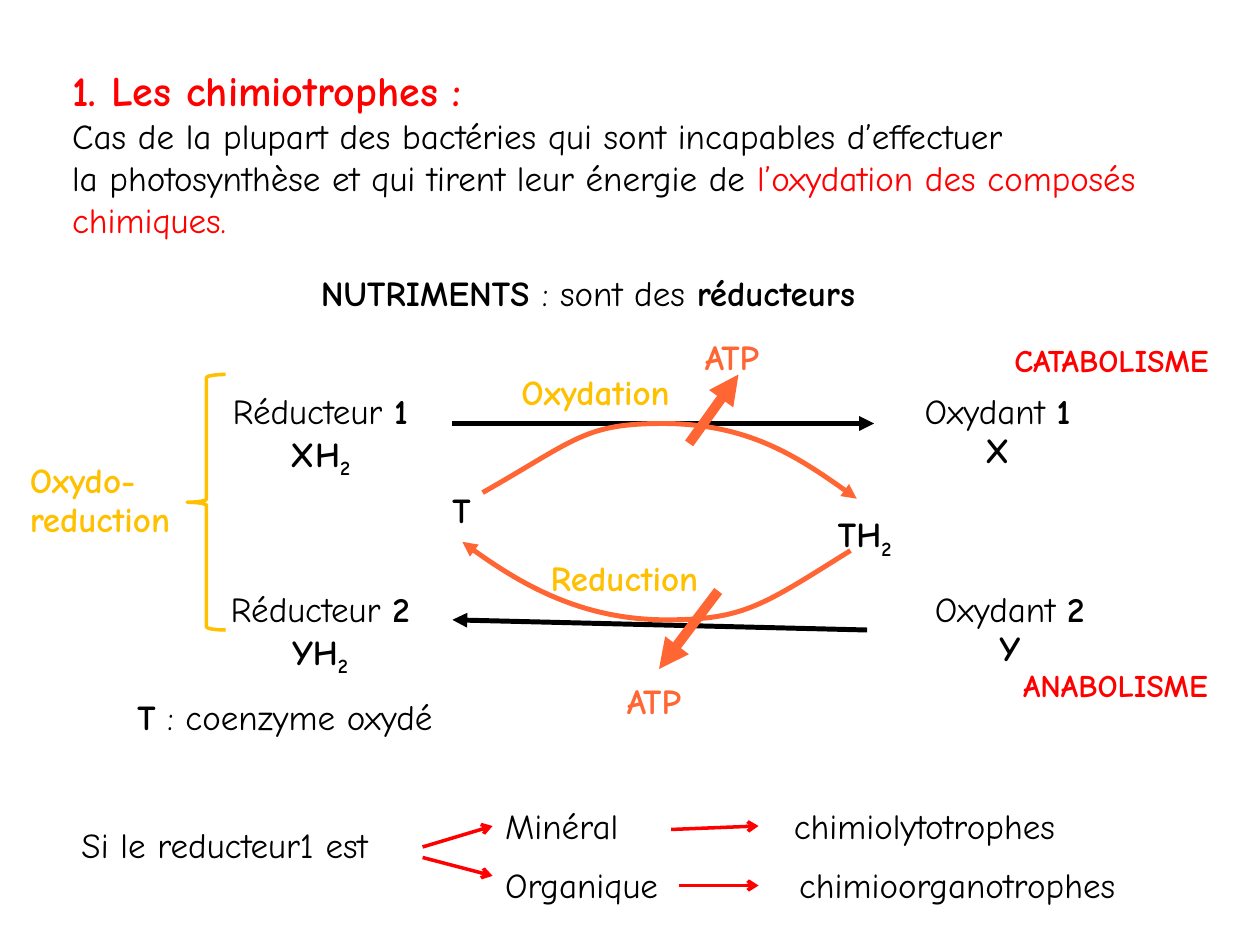
from dataclasses import dataclass

from lxml.etree import SubElement
from pptx import Presentation
from pptx.dml.color import RGBColor as RGB
from pptx.enum.shapes import MSO_CONNECTOR as LINK, MSO_SHAPE as SHAPE
from pptx.enum.text import MSO_ANCHOR as ANCHOR, MSO_AUTO_SIZE as FIT, PP_ALIGN as ALIGN
from pptx.oxml.ns import qn
from pptx.util import Pt


@dataclass(frozen=True)
class Theme:
    font: str = "Comic Neue"
    ink: RGB = RGB(0, 0, 0)
    red: RGB = RGB(255, 0, 0)
    orange: RGB = RGB(0xFF, 0x66, 0x33)
    gold: RGB = RGB(0xFF, 0xC0, 0)
    heading: float = 24
    body: float = 20
    label: float = 18
    thin: float = 2
    medium: float = 2.83
    thick: float = 5.67


THEME = Theme()
BOLD = {"bold": True}
SUBSCRIPT = {"bold": True, "baseline": -25000}


def write(frame, runs, *, color=THEME.ink, size=THEME.body, bold=False,
          align=ALIGN.LEFT, spacing=None, tab=None):
    """Fill a frame; each run is a string or (string, format overrides)."""
    paragraph = frame.paragraphs[0]
    paragraph.alignment = align
    if spacing:
        paragraph.line_spacing = spacing
    if tab:
        stops = SubElement(paragraph._p.get_or_add_pPr(), qn("a:tabLst"))
        SubElement(stops, qn("a:tab"), pos=str(Pt(tab)), algn="l")
    for run_text in [runs] if isinstance(runs, str) else runs:
        words, own = (run_text, {}) if isinstance(run_text, str) else run_text
        for index, line in enumerate(words.split("\n")):
            if index:
                paragraph.add_line_break()
            if not line:
                continue
            run = paragraph.add_run()
            run.text = line
            run.font.name = THEME.font
            run.font.size = Pt(own.get("size", size))
            run.font.bold = own.get("bold", bold)
            run.font.color.rgb = own.get("color", color)
            if "baseline" in own:
                run._r.get_or_add_rPr().set("baseline", str(own["baseline"]))


def add_text(slide, runs, left, top, width, height=22, *, inset=(0, 0),
             wrap=True, spacing=0.93, **style):
    box = slide.shapes.add_textbox(Pt(left), Pt(top), Pt(width), Pt(height))
    frame = box.text_frame
    frame.word_wrap = wrap
    frame.auto_size = FIT.SHAPE_TO_FIT_TEXT
    frame.margin_left = frame.margin_right = Pt(inset[0])
    frame.margin_top = frame.margin_bottom = Pt(inset[1])
    write(frame, runs, spacing=spacing, **style)
    return box


def style_line(shape, color, width, head=None):
    shape.line.color.rgb = color
    shape.line.width = Pt(width)
    if head:
        SubElement(shape.line._get_or_add_ln(), qn("a:tailEnd"), type=head)


def add_arrow(slide, start, end, color, width, head="triangle"):
    arrow = slide.shapes.add_connector(LINK.STRAIGHT, *map(Pt, (*start, *end)))
    style_line(arrow, color, width, head)
    SubElement(arrow._element.spPr, qn("a:effectLst"))
    return arrow


def add_curved_arrow(slide, points, color, width):
    """Draw a start point followed by Bezier triples."""
    (start, *rest) = [(Pt(x), Pt(y)) for x, y in points]
    builder = slide.shapes.build_freeform(*start)
    builder.add_line_segments(rest, close=False)
    curve = builder.convert_to_shape()
    curve.shadow.inherit = False
    curve.fill.background()
    style_line(curve, color, width, "triangle")
    # Turn each three straight segments into one cubic segment
    outline = next(curve._element.iter(qn("a:path")))
    segments = outline.findall(qn("a:lnTo"))
    for index in range(0, len(segments), 3):
        cubic = SubElement(outline, qn("a:cubicBezTo"))
        for segment in segments[index:index + 3]:
            cubic.append(segment[0])
            outline.remove(segment)


def place_title(slide, left, top, width, height):
    title = slide.shapes.title
    title.left, title.top, title.width, title.height = map(Pt, (left, top, width, height))
    frame = title.text_frame
    frame.word_wrap = True
    frame.auto_size = FIT.NONE
    frame.vertical_anchor = ANCHOR.MIDDLE
    write(frame, [
        ("1. Les chimiotrophes\u00a0:\n", {"bold": True, "size": THEME.heading, "color": THEME.red}),
        "Cas de la plupart des bactéries qui sont incapables d’effectuer \n"
        "la photosynthèse et qui tirent leur énergie de ",
        ("l’oxydation des composés chimiques.", {"color": THEME.red}),
    ])


def place_cycle(slide, left, top):
    def at(x, y):
        return left + x, top + y

    # Reducers and oxidants, one pair for each reaction
    for x, y, name, number, formula, index in (
            (0, 38.6, "Réducteur ", "1", "XH", "2"),
            (387, 38.6, "Oxydant ", "1", "X", ""),
            (0, 151.7, "Réducteur ", "2", "YH", "2"),
            (394, 151.7, "Oxydant ", "2", "Y", "")):
        add_text(slide, [name, (f"{number}\n{formula}", BOLD), (index, SUBSCRIPT)],
                 *at(x, y), 142, 45, align=ALIGN.CENTER)

    # Reaction arrows
    for start, end in (((146.5, 56), (387.5, 56)), ((383.5, 174), (146.5, 168.2))):
        add_arrow(slide, at(*start), at(*end), THEME.ink, THEME.medium)

    # Coenzyme loop
    for points in (
            ((163.8, 95.5), (217, 65.3), (222, 56), (266.7, 56),
             (315, 56), (348, 77.5), (377.6, 99)),
            ((374, 128.6), (324.3, 159.6), (313.5, 168.2), (268.9, 168.2),
             (221.4, 168.2), (181.8, 146), (152.2, 123.6))):
        add_curved_arrow(slide, [at(*point) for point in points], THEME.orange, THEME.medium)
    add_text(slide, "T", *at(146.5, 95.5), 14, bold=True, wrap=False)
    add_text(slide, ["TH", ("2", SUBSCRIPT)], *at(366.8, 107), 37.5, bold=True, wrap=False)

    # ATP leaving each reaction
    for label, start, end in (((270.3, 0), (281.8, 67.4), (310, 28)),
                              ((225.7, 196.3), (298.4, 151.7), (264.6, 196.3))):
        add_text(slide, "ATP", *at(*label), 72, 28, color=THEME.orange, bold=True,
                 align=ALIGN.CENTER, spacing=1.25)
        add_arrow(slide, at(*start), at(*end), THEME.orange, THEME.thick)

    # Reaction and metabolism names
    for name, x, y, width, color, size in (
            ("Oxydation", 186, 28, 124, THEME.gold, THEME.body),
            ("Reduction", 202.6, 134.4, 107, THEME.gold, THEME.body),
            ("CATABOLISME", 467.6, 10.6, 140, THEME.red, THEME.label),
            ("ANABOLISME", 472.6, 196.3, 135, THEME.red, THEME.label)):
        add_text(slide, name, *at(x, y), width, color=color, size=size, bold=True)


def place_brace(slide, left, top, height):
    brace = slide.shapes.add_shape(SHAPE.LEFT_BRACE, Pt(left + 90), Pt(top), Pt(22), Pt(height))
    brace.shadow.inherit = False
    brace.fill.background()
    style_line(brace, THEME.gold, THEME.thin)
    add_text(slide, "Oxydo- reduction", left, top + 50, 101.5, 45, color=THEME.gold, bold=True)


def place_outcomes(slide, left, top):
    padded = {"inset": (7.2, 3.6), "spacing": None}
    add_text(slide, "Si le reducteur1 est", left, top + 11, 225, 32, **padded)
    # Each kind of reducer leads to one class of organism
    for kind, y, tab, fork_y, tip_y, start, end in (
            ("Organique\tchimioorganotrophes", 34, 168, 34, 44.5, (348.5, 50), (394, 50)),
            ("Minéral\tchimiolytotrophes", 0, 165, 28, 16, (344, 18), (394, 16))):
        row = add_text(slide, kind, left + 242, top + y, 400, 32, tab=tab, **padded)
        fork = add_arrow(slide, (left + 202, top + fork_y), (left + 242, top + tip_y),
                         THEME.red, THEME.thin, "arrow")
        if tip_y == y + 16:
            fork.end_connect(row, 1)
        add_arrow(slide, (left + start[0], top + start[1]), (left + end[0], top + end[1]),
                  THEME.red, THEME.thin, "arrow")


def main():
    deck = Presentation()
    deck.slide_width, deck.slide_height = Pt(720), Pt(540)
    slide = deck.slides.add_slide(deck.slide_layouts[5])
    place_title(slide, 34, 22, 648, 130)
    add_text(slide, [("NUTRIMENTS ", BOLD), ": sont des ", ("réducteurs", BOLD)],
             157.5, 157.5, 357, align=ALIGN.CENTER, wrap=False)
    place_cycle(slide, 112, 186)
    place_brace(slide, 17, 214, 146)
    add_text(slide, [("T", BOLD), " : coenzyme oxydé"], 78.5, 399.5, 261)
    place_outcomes(slide, 39.5, 456)
    deck.save("out.pptx")


if __name__ == "__main__":
    main()
